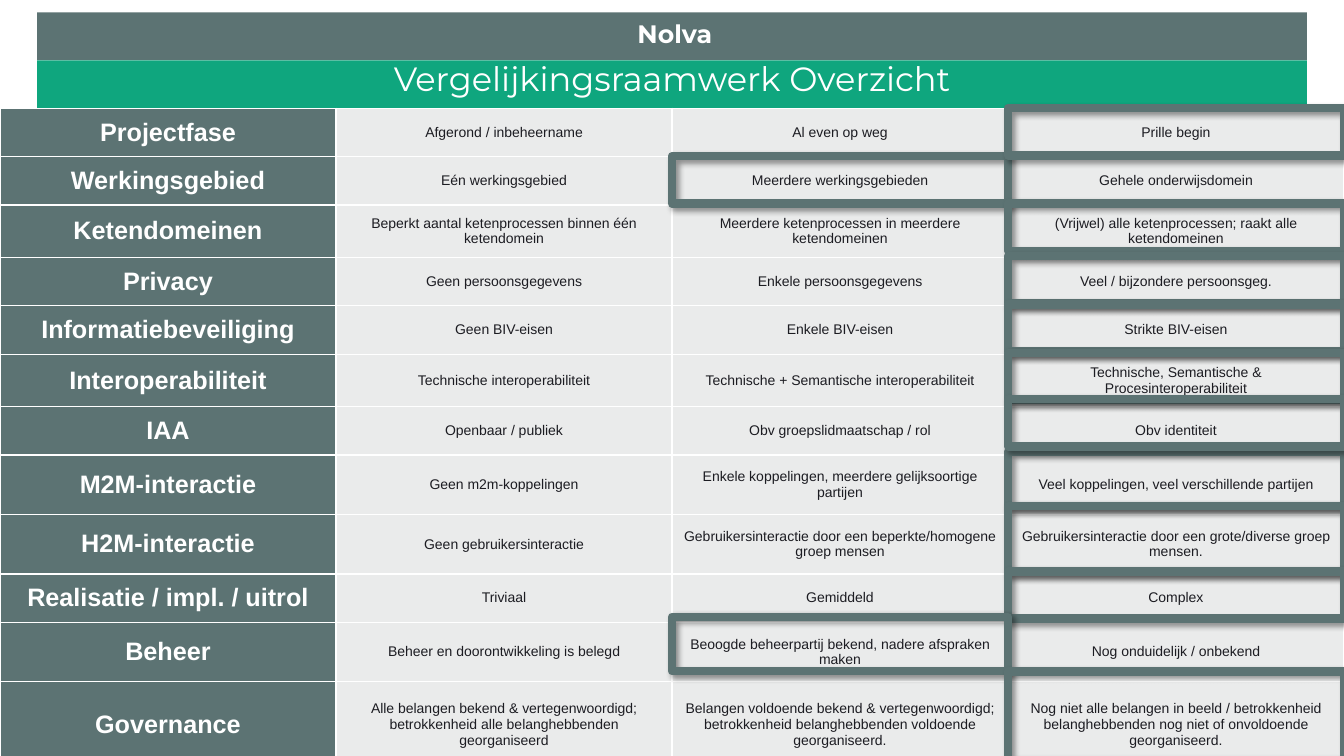
from dataclasses import dataclass

from lxml import etree
from pptx import Presentation
from pptx.dml.color import RGBColor
from pptx.enum.shapes import MSO_SHAPE
from pptx.enum.text import MSO_ANCHOR, MSO_AUTO_SIZE, PP_ALIGN
from pptx.oxml.ns import qn
from pptx.util import Pt

RECT = MSO_SHAPE.RECTANGLE
CENTER = PP_ALIGN.CENTER
MIDDLE = MSO_ANCHOR.MIDDLE
BOTTOM = MSO_ANCHOR.BOTTOM
NO_FIT = MSO_AUTO_SIZE.NONE


@dataclass(frozen=True)
class Theme:
    slate: str = "5C7373"
    green: str = "0FA67E"
    pale: str = "EAEBEB"
    white: str = "FFFFFF"
    ink: str = "1C1C22"
    black: str = "000000"
    head_font: str = "Montserrat"
    cell_font: str = "Arial"
    title: float = 24
    label: float = 18
    cell: float = 10
    inset: float = 7.2
    frame: float = 6


COL = 240
TABLE_TOP = 77.3
HEIGHTS = [33.1, 33.1, 37.4, 33.1, 33.1, 37.4, 33.1, 42.5, 42.5, 33.1, 42.5, 61.2]
ROWS = [
    ("Projectfase", "Afgerond / inbeheername", "Al even op weg", "Prille begin"),
    ("Werkingsgebied", "Eén werkingsgebied", "Meerdere werkingsgebieden",
     "Gehele onderwijsdomein"),
    ("Ketendomeinen", "Beperkt aantal ketenprocessen binnen één ketendomein",
     "Meerdere ketenprocessen in meerdere ketendomeinen",
     "(Vrijwel) alle ketenprocessen; raakt alle ketendomeinen"),
    ("Privacy", "Geen persoonsgegevens", "Enkele persoonsgegevens",
     "Veel / bijzondere persoonsgeg."),
    ("Informatiebeveiliging", "Geen BIV-eisen", "Enkele BIV-eisen", "Strikte BIV-eisen"),
    ("Interoperabiliteit", "Technische interoperabiliteit",
     "Technische + Semantische interoperabiliteit",
     "Technische, Semantische & Procesinteroperabiliteit"),
    ("IAA", "Openbaar / publiek", "Obv groepslidmaatschap / rol", "Obv identiteit"),
    ("M2M-interactie", "Geen m2m-koppelingen",
     "Enkele koppelingen, meerdere gelijksoortige partijen",
     "Veel koppelingen, veel verschillende partijen"),
    ("H2M-interactie", "Geen gebruikersinteractie",
     "Gebruikersinteractie door een beperkte/homogene groep mensen",
     "Gebruikersinteractie door een grote/diverse groep mensen."),
    ("Realisatie / impl. / uitrol", "Triviaal", "Gemiddeld", "Complex"),
    ("Beheer", "Beheer en doorontwikkeling is belegd",
     "Beoogde beheerpartij bekend, nadere afspraken maken",
     "Nog onduidelijk / onbekend"),
    ("Governance",
     "Alle belangen bekend & vertegenwoordigd; betrokkenheid alle belanghebbenden georganiseerd",
     "Belangen voldoende bekend & vertegenwoordigd; betrokkenheid belanghebbenden voldoende georganiseerd.",
     "Nog niet alle belangen in beeld / betrokkenheid belanghebbenden nog niet of onvoldoende georganiseerd."),
]
# Column, top and height of each marked choice
CHOICES = [
    (2, 111.6, 33.8), (3, 145.4, 33.8), (3, 182.9, 33.8), (3, 217.4, 33.8),
    (3, 322.6, 38.9), (3, 361.4, 46.8), (3, 408.2, 33.8), (2, 440.6, 38.9),
    (3, 479.5, 63.4), (3, 77.3, 33.8), (3, 252, 33.8), (3, 285.1, 33.8),
]


def paint(fill, color):
    fill.solid()
    fill.fore_color.rgb = RGBColor.from_string(color)


def tint(parent, color):
    fill = etree.SubElement(parent, qn("a:solidFill"))
    return etree.SubElement(fill, qn("a:srgbClr"), val=color)


class Board:
    def __init__(self, slide, theme):
        self.slide, self.theme = slide, theme

    def style(self, para, font, size, color, bold):
        para.alignment = CENTER
        for run in para.runs:
            run.font.name, run.font.size, run.font.bold = font, Pt(size), bold
            run.font.color.rgb = RGBColor.from_string(color)

    def inset(self, item):
        item.margin_left = item.margin_right = Pt(self.theme.inset)
        item.margin_top = item.margin_bottom = Pt(self.theme.inset)

    def holder(self, shape, text, box, anchor, size, bold):
        """Place a placeholder and set its one line of text."""
        shape.left, shape.top, shape.width, shape.height = map(Pt, box)
        frame = shape.text_frame
        frame.text = text
        frame.word_wrap, frame.auto_size = True, NO_FIT
        frame.vertical_anchor = anchor
        self.inset(frame)
        para = frame.paragraphs[0]
        para.space_before = Pt(0)
        self.style(para, self.theme.head_font, size, self.theme.white, bold)
        return para

    def title(self, text, box):
        shape = self.slide.shapes.title
        paint(shape.fill, self.theme.green)
        self.holder(shape, text, box, BOTTOM, self.theme.title, False)

    def body(self, text, box):
        para = self.holder(self.slide.placeholders[1], text, box, MIDDLE,
                           self.theme.label, True)
        props = para._p.get_or_add_pPr()
        props.set("marL", str(Pt(4.3)))
        props.set("indent", "0")
        etree.SubElement(props, qn("a:buNone"))

    def rect(self, box):
        shape = self.slide.shapes.add_shape(RECT, *map(Pt, box))
        shape.shadow.inherit = False
        return shape

    def band(self, box):
        """Draw the heading band behind all other shapes."""
        shape = self.rect(box)
        paint(shape.fill, self.theme.slate)
        shape.line.fill.background()
        self.slide.shapes._spTree.insert(2, shape._element)

    def frame(self, box):
        shape = self.rect(box)
        shape.fill.background()
        paint(shape.line.fill, self.theme.slate)
        shape.line.width = Pt(self.theme.frame)
        effects = shape._element.spPr.find(qn("a:effectLst"))
        shade = etree.SubElement(effects, qn("a:outerShdw"), blurRad=str(Pt(4)),
                                 dist=str(Pt(3)), dir=str(45 * 60000), rotWithShape="0")
        color = etree.SubElement(shade, qn("a:srgbClr"), val=self.theme.black)
        etree.SubElement(color, qn("a:alpha"), val="40000")

    def cell(self, cell, text, label):
        look = self.theme
        cell.text = text
        cell.vertical_anchor = MIDDLE
        self.inset(cell)
        props = cell._tc.get_or_add_tcPr()
        for side in ("lnL", "lnR", "lnT", "lnB"):
            tint(etree.SubElement(props, qn("a:" + side), w=str(Pt(1))), look.white)
        paint(cell.fill, look.slate if label else look.pale)
        self.style(cell.text_frame.paragraphs[0], look.cell_font,
                   look.label if label else look.cell,
                   look.white if label else look.ink, label)

    def table(self, rows, heights, top, width):
        count = len(rows[0])
        grid = self.slide.shapes.add_table(
            len(rows), count, 0, Pt(top), Pt(width * count), Pt(sum(heights))).table
        grid.first_row = grid.horz_banding = False
        for col in grid.columns:
            col.width = Pt(width)
        for r, (texts, height) in enumerate(zip(rows, heights)):
            grid.rows[r].height = Pt(height)
            for c, text in enumerate(texts):
                self.cell(grid.cell(r, c), text, c == 0)


def main():
    deck = Presentation()
    deck.slide_width, deck.slide_height = Pt(960), Pt(540)
    board = Board(deck.slides.add_slide(deck.slide_layouts[1]), Theme())
    board.band((26.5, 8.9, 907, 34))
    board.title("Vergelijkingsraamwerk Overzicht", (26.5, 43.1, 907, 34))
    board.body("Nolva", (36.7, 5, 886.3, 38.2))
    board.table(ROWS, HEIGHTS, TABLE_TOP, COL)
    for col, top, height in CHOICES:
        board.frame((col * COL, top, COL, height))
    deck.save("out.pptx")


if __name__ == "__main__":
    main()
